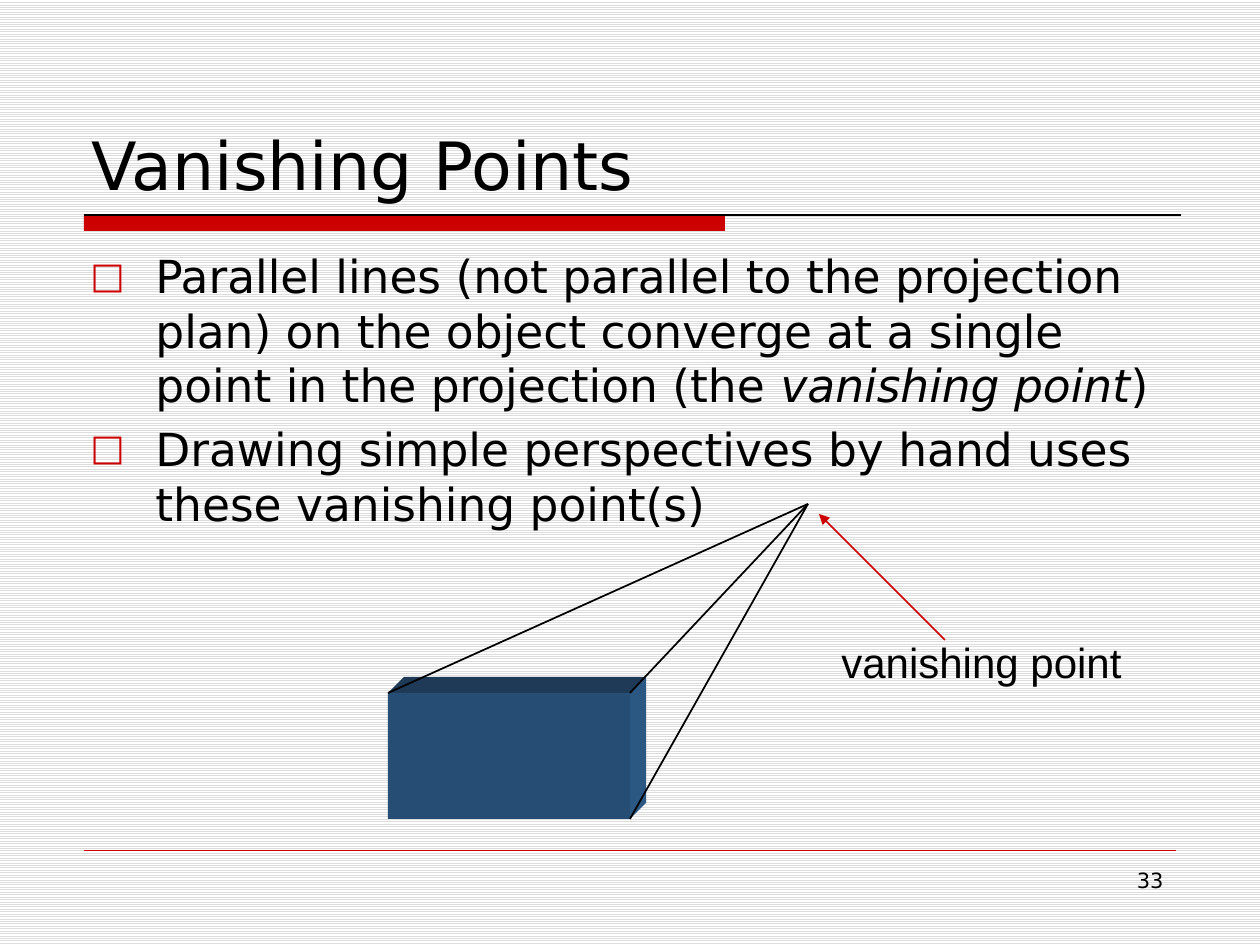
from lxml import etree
from pptx import Presentation
from pptx import util as u
from pptx.dml.color import RGBColor
from pptx.enum import dml, shapes, text
from pptx.oxml.ns import qn

PX = 914400 // 126
RED, BLACK = "CC0000", "000000"
SANS = "DejaVu Sans"


def rgb(value):
    return RGBColor.from_string(value)


def add_line(s, start, end, color, width=1.0, arrow=False):
    line = s.shapes.add_connector(shapes.MSO_CONNECTOR.STRAIGHT,
                                  *(v * PX for v in (*start, *end)))
    line.line.color.rgb = rgb(color)
    line.line.width = u.Pt(width)
    if arrow:
        etree.SubElement(line.line._get_or_add_ln(), qn("a:tailEnd"), type="triangle")
    etree.SubElement(line._element.spPr, qn("a:effectLst"))


def paint(sp, color):
    sp.shadow.inherit = False
    sp.fill.solid()
    sp.fill.fore_color.rgb = rgb(color)
    sp.line.fill.background()


def add_rect(s, box, color):
    paint(s.shapes.add_shape(shapes.MSO_SHAPE.RECTANGLE, *(v * PX for v in box)), color)


def add_polygon(s, points, color):
    builder = s.shapes.build_freeform(*points[0], scale=PX)
    builder.add_line_segments(points[1:], close=True)
    paint(builder.convert_to_shape(), color)


def add_text(s, box, paragraphs, size, font=SANS, wrap=True):
    """Each paragraph is a list of strings; every second string is italic."""
    tf = s.shapes.add_textbox(*(v * PX for v in box)).text_frame
    tf.word_wrap = wrap
    for i, parts in enumerate(paragraphs):
        p = tf.add_paragraph() if i else tf.paragraphs[0]
        for j, part in enumerate(parts):
            r = p.add_run()
            r.text = part
            r.font.size, r.font.name = u.Pt(size), font
            r.font.italic = j % 2 == 1
            r.font.color.rgb = rgb(BLACK)
    return tf


def add_bullet(p, indent):
    pPr = p._p.get_or_add_pPr()
    pPr.set("marL", str(indent * PX))
    pPr.set("indent", str(-indent * PX))
    color = etree.SubElement(pPr, qn("a:buClr"))
    etree.SubElement(color, qn("a:srgbClr"), val=RED)
    etree.SubElement(pPr, qn("a:buSzPct"), val="80000")
    etree.SubElement(pPr, qn("a:buFont"), typeface=SANS)
    etree.SubElement(pPr, qn("a:buChar"), char="□")


def title_region(s, x, y, w, h):
    tf = add_text(s, (x, y, w, h), [["Vanishing Points"]], 38)
    tf.vertical_anchor = text.MSO_ANCHOR.BOTTOM
    rule_x, rule_y = x + 5, y + h + 5
    add_rect(s, (rule_x, rule_y, 641, 16), RED)
    add_line(s, (rule_x, rule_y), (rule_x + 1097, rule_y), BLACK, 0.75)


def body_region(s, x, y, w, h):
    tf = add_text(s, (x, y, w, h), [
        ["Parallel lines (not parallel to the projection plan) on the object "
         "converge at a single point in the projection (the ", "vanishing point", ")"],
        ["Drawing simple perspectives by hand uses these vanishing point(s)"],
    ], 26)
    for p in tf.paragraphs:
        p.space_before = u.Pt(5.2)
        add_bullet(p, 65)


def perspective_diagram(s, x, y, w, h):
    """Block at the lower left, vanishing point at the top, label at the right."""
    front_w, front_h, depth = 242, 126, 16
    vanishing = (x + 420, y)
    right, bottom = x + front_w, y + h
    top = bottom - front_h
    add_polygon(s, [(x, top), (x + depth, top - depth),
                    (right + depth, top - depth), (right, top)], "1F3A57")
    add_polygon(s, [(right, top), (right + depth, top - depth),
                    (right + depth, bottom - depth), (right, bottom)], "2B5783")
    add_rect(s, (x, top, front_w, front_h), "264D73")
    for corner in ((right, bottom), (right, top), (x, top)):
        add_line(s, corner, vanishing, BLACK)

    tip = (vanishing[0] + 11, y + 10)
    add_line(s, (tip[0] + 126, tip[1] + 126), tip, RED, arrow=True)
    add_text(s, (x + w - 306, y + 126, 306, 63), [["vanishing point"]], 24, "Arial", wrap=False)


def footer_region(s, x, y, w, h):
    add_line(s, (x, y), (x + w, y), RED, 0.25)
    tf = add_text(s, (x + w - 273, y + 11, 273, h - 11), [["33"]], 12)
    tf.paragraphs[0].alignment = text.PP_ALIGN.RIGHT


def main():
    prs = Presentation()
    prs.slide_width, prs.slide_height = u.Inches(10), u.Inches(7.5)
    s = prs.slides.add_slide(prs.slide_layouts[6])
    fill = s.background.fill
    fill.patterned()
    fill.pattern = dml.MSO_PATTERN.LIGHT_HORIZONTAL
    fill.fore_color.rgb = rgb("DDDDDD")
    fill.back_color.rgb = rgb("FFFFFF")

    title_region(s, 79, 42, 1103, 168)
    footer_region(s, 84, 850, 1092, 77)
    body_region(s, 78, 242, 1103, 588)
    perspective_diagram(s, 388, 504, 747, 315)
    prs.save("out.pptx")


if __name__ == "__main__":
    main()
